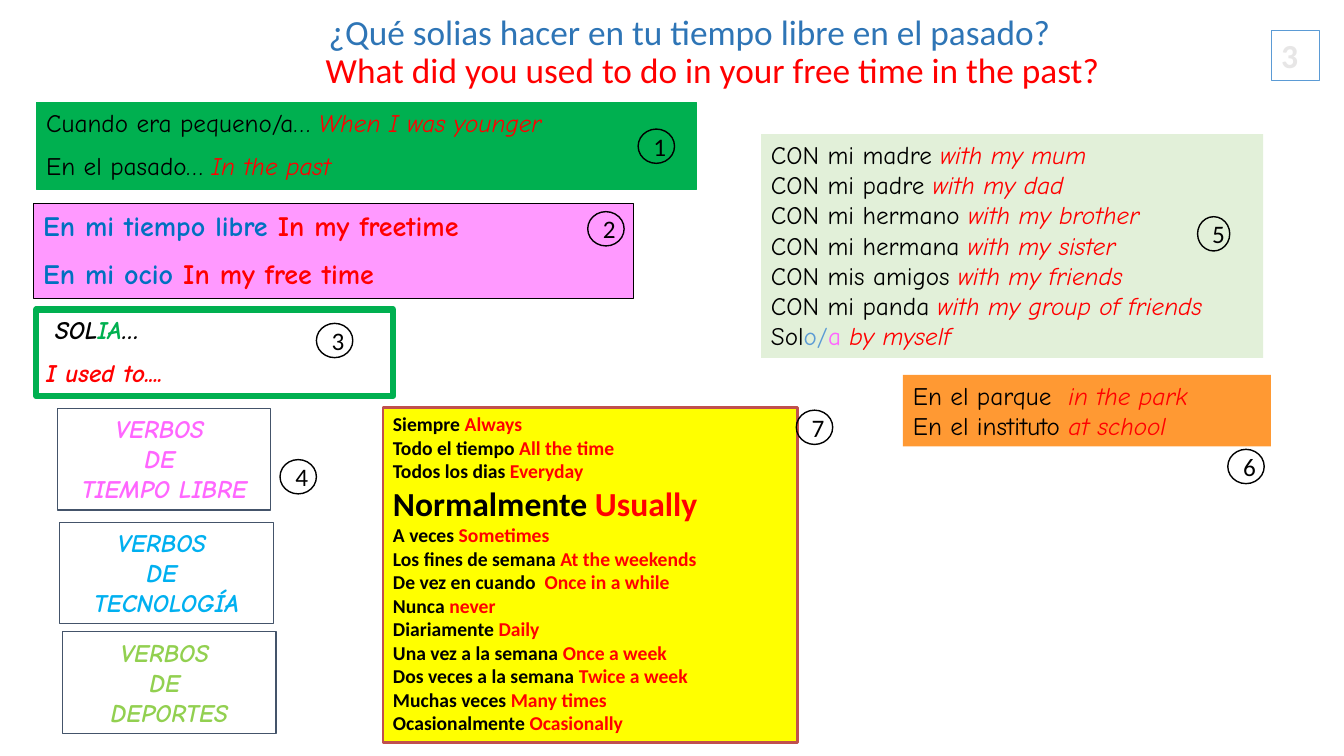
from dataclasses import dataclass

from pptx import Presentation
from pptx.dml.color import RGBColor
from pptx.enum.shapes import MSO_SHAPE
from pptx.enum.text import MSO_ANCHOR, PP_ALIGN
from pptx.util import Pt


@dataclass(frozen=True)
class Theme:
    black: str = "000000"
    red: str = "FF0000"
    title_blue: str = "2E75B6"
    blue: str = "0070C0"
    light_blue: str = "5B9BD5"
    cyan: str = "00B0F0"
    green: str = "00B050"
    lime: str = "92D050"
    pale_green: str = "E2F0D9"
    pink: str = "FF66FF"
    pale_pink: str = "FF99FF"
    orange: str = "FF9933"
    yellow: str = "FFFF00"
    brick: str = "C0504D"
    slate: str = "44546A"
    grey: str = "E7E6E6"
    plain: str = "Calibri"
    comic: str = "Comic Neue"
    title_size: float = 25.2
    large: float = 24
    medium: float = 20
    body: float = 18
    small: float = 14


class SlideWriter:
    """Draw styled titles, text panels and number badges on one slide."""

    def __init__(self, presentation, theme):
        self.theme = theme
        self.slide = presentation.slides.add_slide(presentation.slide_layouts[5])

    def place(self, shape, box):
        shape.left, shape.top, shape.width, shape.height = (Pt(value) for value in box)

    def run(self, paragraph, text, color, font, size, bold=False, italic=False):
        run = paragraph.add_run()
        run.text = text
        run.font.name = font
        run.font.size = Pt(size)
        run.font.bold = bold
        run.font.italic = italic
        run.font.color.rgb = RGBColor.from_string(color)

    def title(self, box, lines):
        shape = self.slide.shapes.title
        self.place(shape, box)
        frame = shape.text_frame
        frame.word_wrap = True
        frame.vertical_anchor = MSO_ANCHOR.BOTTOM
        paragraph = frame.paragraphs[0]
        paragraph.alignment = PP_ALIGN.CENTER
        paragraph.line_spacing = 0.9
        properties = paragraph._p.get_or_add_pPr()
        properties.set("marL", str(Pt(27)))
        properties.set("indent", str(Pt(-27)))
        for index, (text, color) in enumerate(lines):
            if index:
                paragraph.add_line_break()
            self.run(paragraph, text, color, self.theme.plain, self.theme.title_size)

    def shape(self, kind, box, fill=None, line=None, weight=0.75):
        shape = self.slide.shapes.add_shape(kind, *(Pt(value) for value in box))
        shape.shadow.inherit = False
        if fill:
            shape.fill.solid()
            shape.fill.fore_color.rgb = RGBColor.from_string(fill)
        else:
            shape.fill.background()
        if line:
            shape.line.color.rgb = RGBColor.from_string(line)
            shape.line.width = Pt(weight)
        else:
            shape.line.fill.background()
        shape.text_frame.word_wrap = True
        return shape

    def panel(self, box, paragraphs, fill=None, line=None, weight=0.75, font=None,
              size=None, bold=False, italic=False, english_italic=False, gap=0,
              align=PP_ALIGN.LEFT, anchor=MSO_ANCHOR.TOP, sizes=None):
        frame = self.shape(MSO_SHAPE.RECTANGLE, box, fill, line, weight).text_frame
        frame.vertical_anchor = anchor
        for index, runs in enumerate(paragraphs):
            paragraph = frame.add_paragraph() if index else frame.paragraphs[0]
            paragraph.alignment = align
            paragraph.space_before = Pt(gap if index else 0)
            for text, color in runs:
                slanted = italic or (english_italic and color == self.theme.red)
                self.run(paragraph, text, color, font or self.theme.comic,
                         (sizes or {}).get(index, size or self.theme.body), bold, slanted)

    def badge(self, number, left, top, width=26):
        shape = self.shape(MSO_SHAPE.OVAL, (left, top, width, 24.5), None, self.theme.black, 1)
        shape.text_frame.vertical_anchor = MSO_ANCHOR.MIDDLE
        paragraph = shape.text_frame.paragraphs[0]
        paragraph.alignment = PP_ALIGN.CENTER
        self.run(paragraph, str(number), self.theme.black, self.theme.plain, self.theme.body)


def bilingual(pairs, spanish_color, english_color):
    return [[(spanish + " ", spanish_color), (english, english_color)]
            for spanish, english in pairs]


def main():
    presentation = Presentation()
    presentation.slide_width = Pt(960)
    presentation.slide_height = Pt(540)
    theme = Theme()
    writer = SlideWriter(presentation, theme)

    writer.title((171.5, 0, 648, 68.5), [
        ("¿Qué solias hacer en tu tiempo libre en el pasado? ", theme.title_blue),
        ("What did you used to do in your free time in the past?", theme.red)])

    writer.panel((25.9, 221, 254.9, 61.9), [
        [(" SOL", theme.black), ("IA", theme.green), ("…", theme.black)],
        [("I used to....", theme.red)],
    ], line=theme.green, weight=4.5, bold=True, italic=True, gap=9)

    writer.panel((908, 21.6, 34.6, 36), [[("3", theme.grey)]], line=theme.light_blue,
                 font=theme.plain, size=theme.large, bold=True, anchor=MSO_ANCHOR.MIDDLE)

    free_time = [("En mi tiempo libre", "In my freetime"), ("En mi ocio", "In my free time")]
    writer.panel((23.8, 145.4, 429, 67.7), bilingual(free_time, theme.blue, theme.red),
                 fill=theme.pale_pink, line=theme.black, size=theme.medium, bold=True, gap=10)

    for left, top, topic, color in [(41, 291.6, "TIEMPO LIBRE", theme.pink),
                                    (42.5, 373, "TECNOLOGÍA", theme.cyan),
                                    (44.6, 451.4, "DEPORTES", theme.lime)]:
        writer.panel((left, top, 152.6, 72.7),
                     [[(text, color)] for text in ("VERBOS ", "DE ", topic)],
                     line=theme.slate, bold=True, italic=True, align=PP_ALIGN.CENTER)

    companions = [("CON mi madre", "with my mum"), ("CON mi padre", "with my dad"),
                  ("CON mi hermano", "with my brother"), ("CON mi hermana", "with my sister"),
                  ("CON mis amigos", "with my friends"),
                  ("CON mi panda", "with my group of friends")]
    alone = [("Sol", theme.black), ("o/", theme.light_blue), ("a ", theme.pink),
             ("by myself", theme.red)]
    writer.panel((543.6, 95.8, 358.6, 159.8),
                 bilingual(companions, theme.black, theme.red) + [alone],
                 fill=theme.pale_green, english_italic=True)

    places = [("En el parque ", "in the park"), ("En el instituto", "at school")]
    writer.panel((645, 267.8, 262.8, 51), bilingual(places, theme.black, theme.red),
                 fill=theme.orange, english_italic=True)

    frequencies = [("Siempre", "Always"), ("Todo el tiempo", "All the time"),
                   ("Todos los dias", "Everyday"), ("Normalmente", "Usually"),
                   ("A veces", "Sometimes"), ("Los fines de semana", "At the weekends"),
                   ("De vez en cuando ", "Once in a while"), ("Nunca", "never"),
                   ("Diariamente", "Daily"), ("Una vez a la semana", "Once a week"),
                   ("Dos veces a la semana", "Twice a week"), ("Muchas veces", "Many times"),
                   ("Ocasionalmente", "Ocasionally")]
    writer.panel((273.6, 290.9, 295.9, 239.8), bilingual(frequencies, theme.black, theme.red),
                 fill=theme.yellow, line=theme.brick, weight=2, font=theme.plain,
                 size=theme.small, bold=True, sizes={3: theme.large})

    past = [("Cuando era pequeno/a…", "When I was younger"), ("En el pasado…", "In the past")]
    writer.panel((25.9, 73.4, 471.6, 61.9), bilingual(past, theme.black, theme.red),
                 fill=theme.green, line=theme.green, english_italic=True, gap=9)

    badges = [(455.8, 92.2), (419.8, 151.2), (226, 231), (200, 328.3),
              (855.4, 154.8, 23), (877, 321), (568.8, 293)]
    for number, position in enumerate(badges, 1):
        writer.badge(number, *position)

    presentation.save("out.pptx")


if __name__ == "__main__":
    main()
